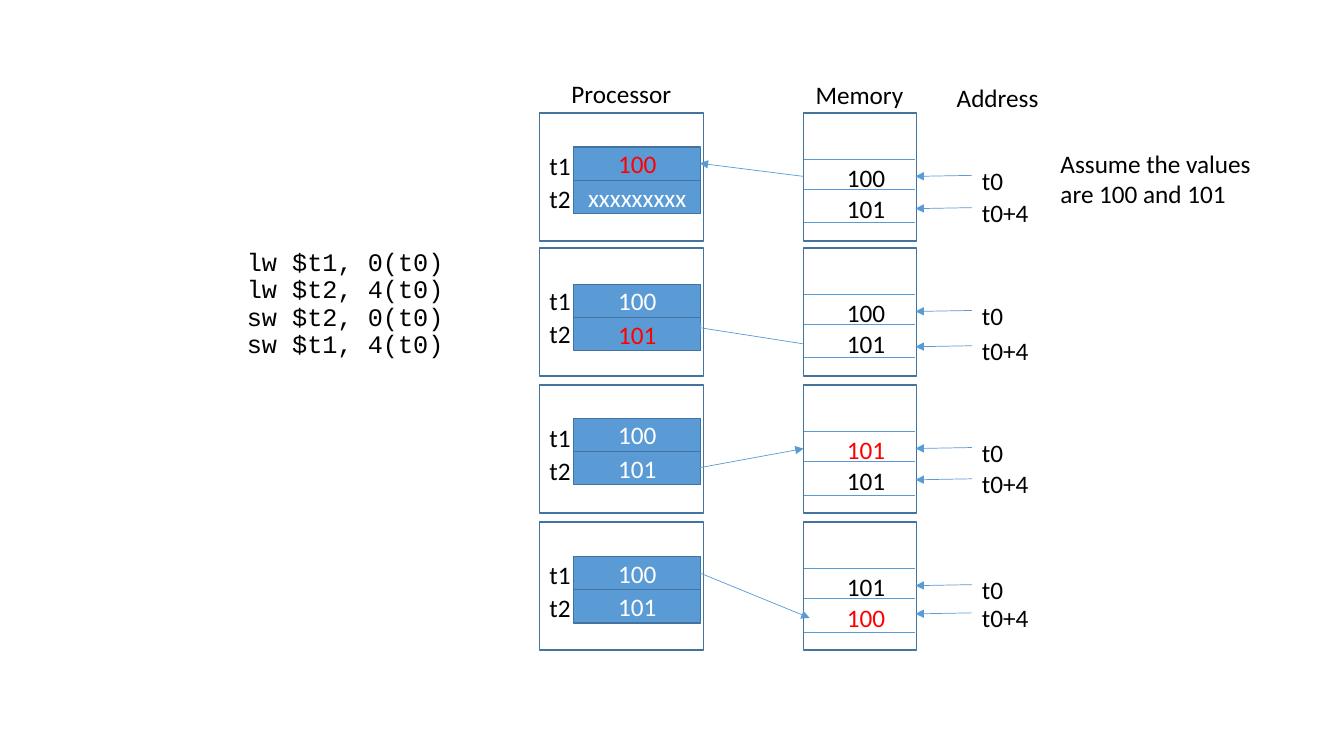
from lxml import etree
from pptx import Presentation
from pptx import util as u
from pptx.dml.color import RGBColor
from pptx.enum import shapes, text
from pptx.oxml.ns import qn

BLACK = RGBColor(0x00, 0x00, 0x00)
WHITE = RGBColor(0xFF, 0xFF, 0xFF)
RED = RGBColor(0xFF, 0x00, 0x00)
BLUE = RGBColor(0x5B, 0x9B, 0xD5)
EDGE = RGBColor(0x43, 0x73, 0x9E)
PX = 9144  # 100 px to the inch


def write(frame, words, font="Calibri", size=18, color=BLACK, align=None, space=None):
    """Fill a text frame, one paragraph for each line of words."""
    for i, line in enumerate(words.split("\n")):
        para = frame.paragraphs[0] if i == 0 else frame.add_paragraph()
        para.alignment = align
        para.line_spacing = space
        run = para.add_run()
        run.text = line
        run.font.name = font
        run.font.size = u.Pt(size)
        run.font.color.rgb = color


class Board:
    """Holds the slide and draws each kind of element on it."""

    def __init__(self, deck):
        self.slide = deck.slides.add_slide(deck.slide_layouts[6])

    def label(self, x, y, w, h, words, wrap=False, grow=True, **style):
        box = self.slide.shapes.add_textbox(x * PX, y * PX, w * PX, h * PX)
        frame = box.text_frame
        frame.word_wrap = wrap
        if grow:
            frame.auto_size = text.MSO_AUTO_SIZE.SHAPE_TO_FIT_TEXT
        write(frame, words, **style)

    def rect(self, x, y, w, h):
        box = self.slide.shapes.add_shape(
            shapes.MSO_SHAPE.RECTANGLE, x * PX, y * PX, w * PX, h * PX)
        box.shadow.inherit = False
        box.fill.background()
        box.line.color.rgb = EDGE
        box.line.width = u.Pt(1)
        return box

    def cell(self, x, y, w, h, words, color):
        box = self.rect(x, y, w, h)
        box.fill.solid()
        box.fill.fore_color.rgb = BLUE
        box.text_frame.vertical_anchor = text.MSO_ANCHOR.MIDDLE
        write(box.text_frame, words, color=color, align=text.PP_ALIGN.CENTER)

    def line(self, x1, y1, x2, y2, arrow=False):
        link = self.slide.shapes.add_connector(
            shapes.MSO_CONNECTOR.STRAIGHT, x1 * PX, y1 * PX, x2 * PX, y2 * PX)
        link.line.color.rgb = BLUE
        link.line.width = u.Pt(0.5)
        props = link._element.spPr
        if arrow:
            etree.SubElement(props.find(qn("a:ln")), qn("a:tailEnd"), type="triangle")
        etree.SubElement(props, qn("a:effectLst"))


def stage(board, top, shift, regs, mem, hot, low, move):
    """Draw one step: registers, memory, addresses and the data move.

    shift: top of the registers below the frame; low: same for the t0+4 arrow.
    hot: index of the changed value, registers first, then memory.
    """
    # Registers
    for i, value in enumerate(regs):
        board.cell(569, top + shift + 33 * i, 126, 33, value, RED if hot == i else WHITE)
        board.label(535, top + 32 + 33 * i, 41, 40, f"t{i + 1}")
    # Frames
    board.rect(535, top, 163, 127)
    board.rect(797, top, 112, 127)
    # Memory words
    for drop in (46, 76, 109):
        board.line(797, top + drop, 908, top + drop)
    for i, value in enumerate(mem):
        board.label(830, top + 44 + 31 * i, 59, 40, value,
                    color=RED if hot == i + 2 else BLACK)
    # Addresses
    for name, drop, wide in (("t0", 63, 41), ("t0+4", low, 67)):
        board.line(964, top + drop - 1, 908, top + drop, arrow=True)
        board.label(964, top + drop - 16, wide, 40, name)
    # Data move
    board.line(*move, arrow=True)


def main():
    deck = Presentation()
    deck.slide_width, deck.slide_height = 1333 * PX, 750 * PX
    board = Board(deck)

    # Code
    board.label(235, 243, 264, 357,
                "lw $t1, 0(t0)\nlw $t2, 4(t0)\nsw $t2, 0(t0)\nsw $t1, 4(t0)",
                wrap=True, grow=False, font="Courier New", space=0.9)

    # Heads and note
    board.label(557, 73, 120, 40, "Processor")
    board.label(799, 74, 111, 40, "Memory")
    board.label(939, 77, 102, 40, "Address")
    board.label(1042, 142, 246, 71, "Assume the values are 100 and 101", wrap=True)

    # One step for each line of code
    steps = (
        (112, 34, ("100", "xxxxxxxxx"), ("100", "101"), 0, 95, (797, 175, 694, 162)),
        (246, 36, ("100", "101"), ("100", "101"), 1, 98, (796, 341, 687, 324)),
        (382, 33, ("100", "101"), ("101", "101"), 2, 94, (694, 464, 797, 445)),
        (518, 34, ("100", "101"), ("101", "100"), 3, 91, (693, 568, 803, 613)),
    )
    for step in steps:
        stage(board, *step)

    deck.save("out.pptx")


if __name__ == "__main__":
    main()
